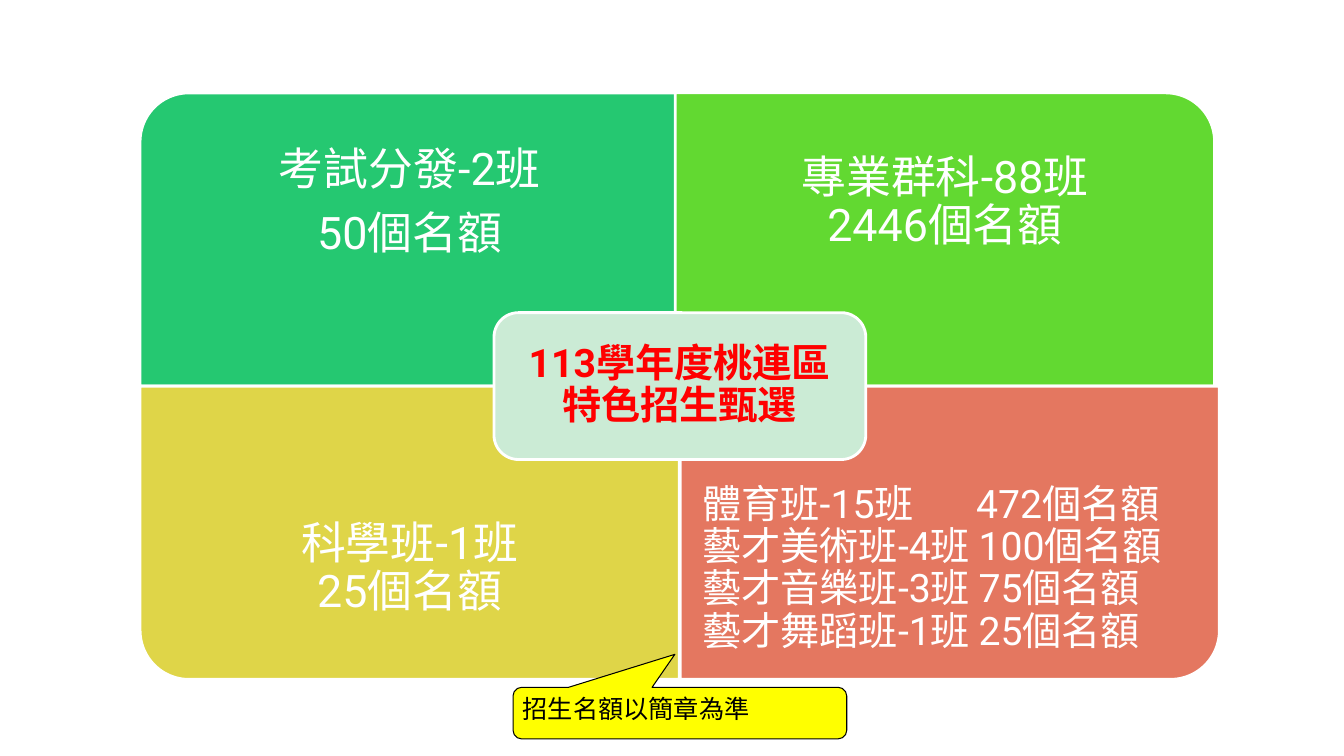
from pptx import Presentation
from pptx.dml.color import RGBColor
from pptx.enum import shapes, text
from pptx.oxml import parse_xml
from pptx.oxml.ns import nsdecls
from pptx.util import Cm, Pt

GREEN = RGBColor(0x25, 0xC8, 0x71)
LIME = RGBColor(0x62, 0xD9, 0x31)
YELLOW = RGBColor(0xDF, 0xD5, 0x48)
CORAL = RGBColor(0xE4, 0x77, 0x60)
MINT = RGBColor(0xCB, 0xEB, 0xD5)
NOTE = RGBColor(0xFF, 0xFF, 0x00)
RED = RGBColor(0xFF, 0, 0)
WHITE = RGBColor(0xFF, 0xFF, 0xFF)
BLACK = RGBColor(0, 0, 0)

PANEL_W, PANEL_H, TEXT_H = 13.59, 7.39, 5.56
TOP, MIDDLE = 2.34, 9.73
LEFT = 3.53
CENTER, LEFT_ALIGN = text.PP_ALIGN.CENTER, text.PP_ALIGN.LEFT

prs = Presentation()
prs.slide_width, prs.slide_height = Cm(33.87), Cm(19.05)
s = prs.slides.add_slide(prs.slide_layouts[5])


def add_box(kind, x, y, w, h, fill, line, width):
    sp = s.shapes.add_shape(kind, Cm(x), Cm(y), Cm(w), Cm(h))
    sp.shadow.inherit = False
    sp.fill.solid()
    sp.fill.fore_color.rgb = fill
    sp.line.color.rgb = line
    sp.line.width = Pt(width)
    return sp


def write(tf, paragraphs, size, color, align, inset, spacing=0.9, bold=False):
    """Fill a text frame; each paragraph is a list of lines."""
    tf.word_wrap = True
    tf.auto_size = text.MSO_AUTO_SIZE.NONE
    tf.vertical_anchor = text.MSO_ANCHOR.MIDDLE
    tf.margin_left = tf.margin_right = Cm(inset)
    tf.margin_top = tf.margin_bottom = Cm(inset)
    for i, lines in enumerate(paragraphs):
        p = tf.add_paragraph() if i else tf.paragraphs[0]
        p.alignment = align
        p.line_spacing = spacing
        p.space_before = Pt(11.2 if i else 0)
        for j, line in enumerate(lines):
            if j:
                p.add_line_break()
            r = p.add_run()
            r.text = line
            r.font.name = "Roboto"
            r.font.size = Pt(size)
            r.font.bold = bold
            r.font.color.rgb = color


# Quadrants: left, top, rotation, fill, paragraphs, size, alignment, inset
quadrants = [
    (LEFT, TOP, 270, GREEN, [["考試分發-2班"], ["50個名額"]], 32, CENTER, 0.63),
    (17.02, TOP, 0, LIME, [["專業群科-88班", "2446個名額"]], 32, CENTER, 0.63),
    (LEFT, MIDDLE, 180, YELLOW, [["科學班-1班", "25個名額"]], 32, CENTER, 0.63),
    (17.14, MIDDLE, 90, CORAL,
     [["體育班-15班\t472個名額", "藝才美術班-4班 100個名額",
       "藝才音樂班-3班 75個名額", "藝才舞蹈班-1班 25個名額"]],
     28, LEFT_ALIGN, 0.56),
]
for x, y, rotation, fill, paragraphs, size, align, inset in quadrants:
    w, h = (PANEL_H, PANEL_W) if rotation % 180 else (PANEL_W, PANEL_H)
    panel = add_box(shapes.MSO_SHAPE.ROUND_1_RECTANGLE,
                    x + (PANEL_W - w) / 2, y + (PANEL_H - h) / 2, w, h, fill, WHITE, 2)
    panel.rotation = rotation
    text_y = y if y == TOP else y + PANEL_H - TEXT_H
    tb = s.shapes.add_textbox(Cm(x), Cm(text_y), Cm(PANEL_W), Cm(TEXT_H))
    write(tb.text_frame, paragraphs, size, WHITE, align, inset)

# Tab stop that sets off the sports class quota
pPr = tb.text_frame.paragraphs[0]._p.get_or_add_pPr()
pPr.append(parse_xml(
    f'<a:tabLst {nsdecls("a")}><a:tab pos="{Cm(6.9)}" algn="l"/></a:tabLst>'))

# Central title, in front of the quadrants
add_box(shapes.MSO_SHAPE.ROUNDED_RECTANGLE, 12.45, 7.88, 9.37, 3.7, MINT, WHITE, 2)
title = s.shapes.title
title.left, title.top, title.width, title.height = Cm(12.62), Cm(8.05), Cm(9.02), Cm(3.33)
write(title.text_frame, [["113學年度桃連區特色招生甄選"]], 28, RED, CENTER, 0.3, bold=True)
s.shapes.element.append(title.element)

callout = add_box(shapes.MSO_SHAPE.ROUNDED_RECTANGULAR_CALLOUT,
                  12.93, 17.32, 8.41, 1.3, NOTE, BLACK, 0.75)
for i, value in enumerate((-0.015, -1.14, 0.167)):
    callout.adjustments[i] = value
tf = callout.text_frame
write(tf, [["招生名額以簡章為準"]], 18, BLACK, LEFT_ALIGN, 0.1, spacing=1.0)
tf.vertical_anchor = text.MSO_ANCHOR.TOP
tf.margin_left = tf.margin_right = Cm(0.18)

prs.save("out.pptx")
